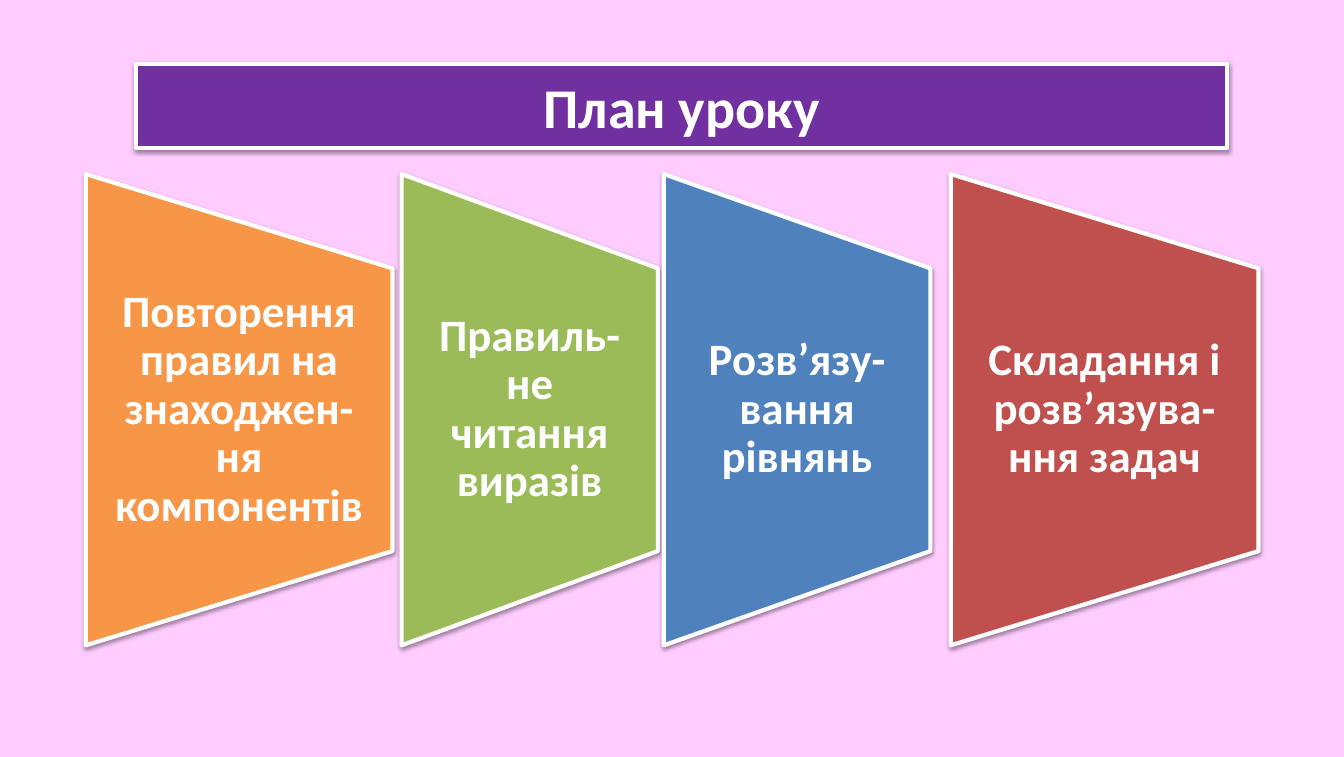
from lxml.etree import SubElement
from pptx import Presentation
from pptx.dml.color import RGBColor
from pptx.enum.shapes import MSO_SHAPE
from pptx.enum.text import MSO_ANCHOR, MSO_AUTO_SIZE, PP_ALIGN
from pptx.oxml.ns import qn
from pptx.util import Cm, Pt

PINK = RGBColor(0xFF, 0xCC, 0xFF)
PURPLE = RGBColor(0x70, 0x30, 0xA0)
ORANGE = RGBColor(0xF7, 0x96, 0x46)
GREEN = RGBColor(0x9B, 0xBB, 0x59)
BLUE = RGBColor(0x4F, 0x81, 0xBD)
RED = RGBColor(0xC0, 0x50, 0x4D)
WHITE = RGBColor(0xFF, 0xFF, 0xFF)
BLACK = RGBColor(0x00, 0x00, 0x00)

STEP_HEIGHT = Cm(11.86)
STEP_MIDDLE = Cm(10.31)
TEXT_HEIGHT = Cm(7.11)

# Left edge and width in centimetres, colour, text
STEPS = [
    (2.16, 7.72, ORANGE, "Повторення правил на знаходжен-ня компонентів"),
    (10.11, 6.45, GREEN, "Правиль-не читання виразів"),
    (16.71, 6.71, BLUE, "Розв’язу-вання рівнянь"),
    (23.93, 7.75, RED, "Складання і розв’язува-ння задач"),
]


def add_shadow(shape):
    shape.shadow.inherit = False
    effects = shape._element.spPr.find(qn("a:effectLst"))
    shadow = SubElement(effects, qn("a:outerShdw"), blurRad=str(Pt(3.1)),
                        dist=str(Pt(1.6)), dir="5400000", rotWithShape="0")
    color = SubElement(shadow, qn("a:srgbClr"), val=str(BLACK))
    SubElement(color, qn("a:alpha"), val="38000")


def style_panel(shape, color):
    """Give a shape its fill, white outline and soft shadow."""
    shape.fill.solid()
    shape.fill.fore_color.rgb = color
    shape.line.color.rgb = WHITE
    shape.line.width = Pt(3)
    add_shadow(shape)


def write_text(text_frame, text, size):
    text_frame.word_wrap = True
    text_frame.vertical_anchor = MSO_ANCHOR.MIDDLE
    text_frame.text = text
    paragraph = text_frame.paragraphs[0]
    paragraph.alignment = PP_ALIGN.CENTER
    paragraph.font.name = "Calibri"
    paragraph.font.size = Pt(size)
    paragraph.font.bold = True
    paragraph.font.color.rgb = WHITE
    return paragraph


def format_title(title):
    title.left, title.top = Cm(3.43), Cm(1.68)
    title.width, title.height = Cm(27.46), Cm(1.96)
    style_panel(title, PURPLE)
    write_text(title.text_frame, "План уроку", 40)
    title.text_frame.auto_size = MSO_AUTO_SIZE.SHAPE_TO_FIT_TEXT


def add_step(slide, left, width, color, text):
    """Add a trapezoid turned on its side, with upright text over it."""
    panel = slide.shapes.add_shape(
        MSO_SHAPE.FLOWCHART_MANUAL_OPERATION,
        left + (width - STEP_HEIGHT) // 2, STEP_MIDDLE - width // 2,
        STEP_HEIGHT, width)
    panel.rotation = 270
    style_panel(panel, color)

    label = slide.shapes.add_textbox(
        left, STEP_MIDDLE - TEXT_HEIGHT // 2, width, TEXT_HEIGHT)
    text_frame = label.text_frame
    text_frame.margin_left = text_frame.margin_right = Cm(0.56)
    text_frame.margin_top = text_frame.margin_bottom = Cm(0)
    write_text(text_frame, text, 32).line_spacing = 0.9


def main():
    presentation = Presentation()
    presentation.slide_width = Cm(33.83)
    presentation.slide_height = Cm(19.05)
    slide = presentation.slides.add_slide(presentation.slide_layouts[5])
    slide.background.fill.solid()
    slide.background.fill.fore_color.rgb = PINK
    format_title(slide.shapes.title)
    for left, width, color, text in STEPS:
        add_step(slide, Cm(left), Cm(width), color, text)
    presentation.save("out.pptx")


if __name__ == "__main__":
    main()
